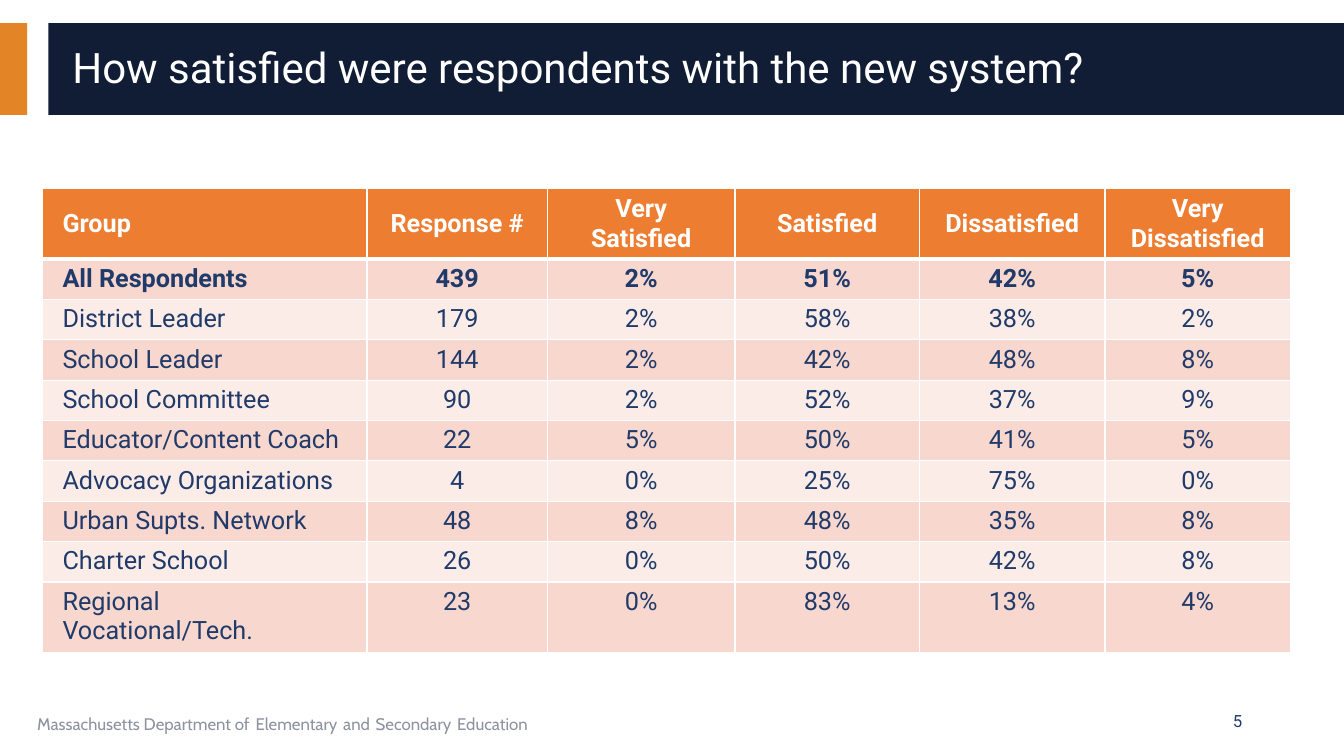
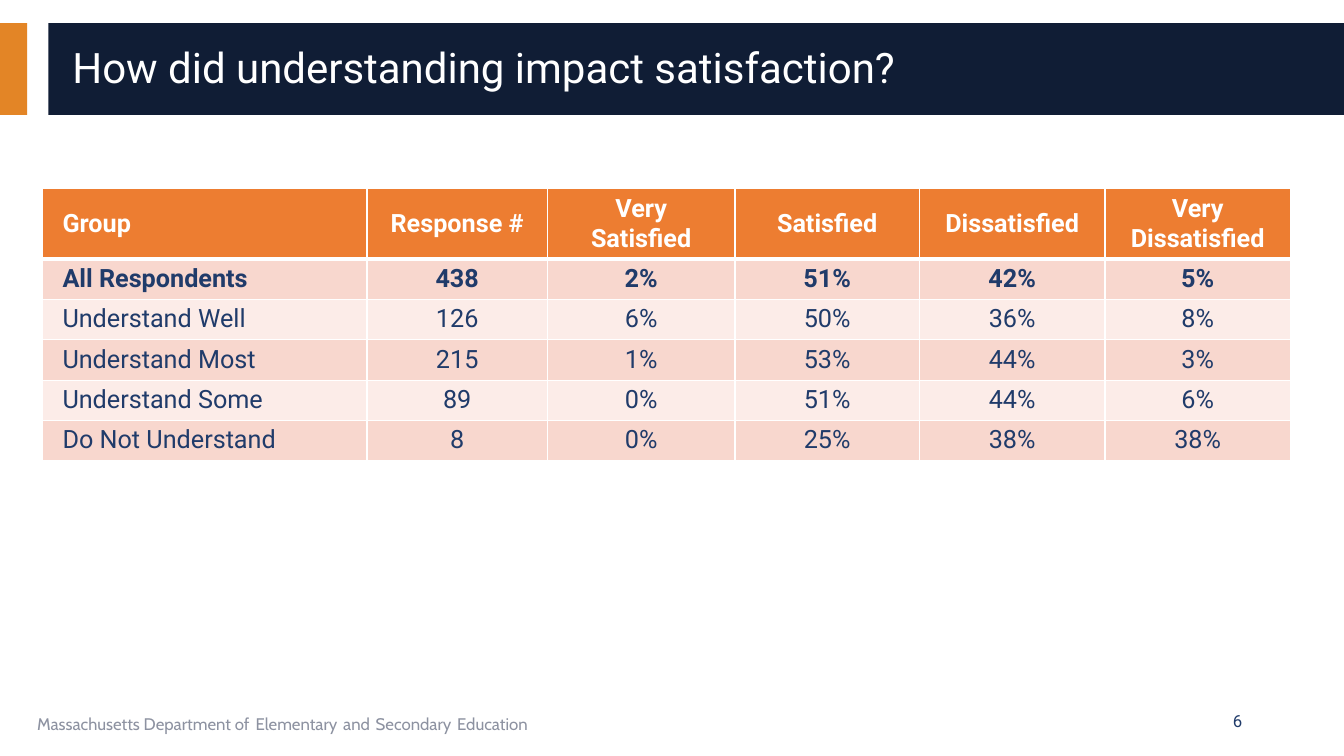
from lxml.etree import SubElement
from pptx import Presentation
from pptx.dml.color import RGBColor
from pptx.enum.shapes import MSO_SHAPE
from pptx.enum.text import MSO_ANCHOR, PP_ALIGN
from pptx.oxml.ns import qn
from pptx.util import Inches, Pt

# Content
FOOTER = ["Massachusetts Department of", "Elementary", "and", "Secondary", "Education"]
HEADERS = ["Group", "Response #", "Very Satisfied", "Satisfied", "Dissatisfied",
           "Very\nDissatisfied"]
SLIDES = [
    {"number": 5, "title": "How satisfied were respondents with the new system?", "rows": [
        ("All Respondents", "439", "2%", "51%", "42%", "5%"),
        ("District Leader", "179", "2%", "58%", "38%", "2%"),
        ("School Leader", "144", "2%", "42%", "48%", "8%"),
        ("School Committee", "90", "2%", "52%", "37%", "9%"),
        ("Educator/Content Coach", "22", "5%", "50%", "41%", "5%"),
        ("Advocacy Organizations", "4", "0%", "25%", "75%", "0%"),
        ("Urban Supts. Network", "48", "8%", "48%", "35%", "8%"),
        ("Charter School", "26", "0%", "50%", "42%", "8%"),
        ("Regional Vocational/Tech.", "23", "0%", "83%", "13%", "4%"),
    ]},
    {"number": 6, "title": "How did understanding impact satisfaction?", "rows": [
        ("All Respondents", "438", "2%", "51%", "42%", "5%"),
        ("Understand Well", "126", "6%", "50%", "36%", "8%"),
        ("Understand Most", "215", "1%", "53%", "44%", "3%"),
        ("Understand Some", "89", "0%", "51%", "44%", "6%"),
        ("Do Not Understand", "8", "0%", "25%", "38%", "38%"),
    ]},
]

# Shared style
ORANGE = RGBColor(0xE3, 0x85, 0x26)
NAVY = RGBColor(0x10, 0x1D, 0x35)
BLUE = RGBColor(0x20, 0x3B, 0x6A)
GRAY = RGBColor(0x8D, 0x92, 0xA1)
WHITE = RGBColor(0xFF, 0xFF, 0xFF)
HEADER_FILL = RGBColor(0xED, 0x7D, 0x31)
BAND_FILLS = [RGBColor(0xF8, 0xD7, 0xCE), RGBColor(0xFC, 0xEC, 0xE8)]
BODY_FONT, FOOTER_FONT = "Roboto", "Cabin"

COLUMN_WIDTHS = [3.22, 1.79, 1.86, 1.83, 1.84, 1.84]
ROW_HEIGHT, TALL_ROW_HEIGHT = 0.4, 0.68
LABEL_LIMIT = 22  # longer group names take two lines


def add_span(para, text, size, color, font=BODY_FONT, bold=False):
    span = para.add_run()
    span.text = text
    span.font.name = font
    span.font.size = Pt(size)
    span.font.bold = bold
    span.font.color.rgb = color


def add_band(page, left, width, color):
    band = page.shapes.add_shape(MSO_SHAPE.RECTANGLE, Inches(left), Inches(0.23),
                                 Inches(width), Inches(0.91))
    band.shadow.inherit = False
    band.fill.solid()
    band.fill.fore_color.rgb = color
    band.line.fill.background()


def add_box(page, left, top, width, height, anchor=MSO_ANCHOR.MIDDLE):
    box = page.shapes.add_textbox(Inches(left), Inches(top), Inches(width), Inches(height))
    box.text_frame.word_wrap = True
    box.text_frame.vertical_anchor = anchor
    return box.text_frame.paragraphs[0]


def add_frame(page, title, number):
    # Bands and title
    add_band(page, 0, 0.27, ORANGE)
    add_band(page, 0.48, 12.85, NAVY)
    para = add_box(page, 0.62, 0.32, 12.44, 0.74)
    para.line_spacing = 0.9
    add_span(para, title, 30, WHITE)

    # Footer, with wide spaces between its parts
    para = add_box(page, 0.27, 6.95, 8.44, 0.4, MSO_ANCHOR.TOP)
    for index, part in enumerate(FOOTER):
        if index:
            add_span(para, " ", 18, BLUE, FOOTER_FONT)
        add_span(para, part, 12, GRAY, FOOTER_FONT)

    # Slide number
    para = add_box(page, 9.42, 6.95, 3, 0.4)
    para.alignment = PP_ALIGN.RIGHT
    add_span(para, str(number), 12, BLUE)


def set_borders(cell, top, bottom):
    properties = cell._tc.get_or_add_tcPr()
    widths = {"a:lnL": 1, "a:lnR": 1, "a:lnT": top, "a:lnB": bottom}
    for position, (side, width) in enumerate(widths.items()):
        line = SubElement(properties, qn(side), w=str(Pt(width)))
        fill = SubElement(line, qn("a:solidFill"))
        SubElement(fill, qn("a:srgbClr"), val=str(WHITE))
        properties.insert(position, line)


def fill_cell(cell, text, row, column):
    is_header = row == 0
    cell.margin_left = cell.margin_right = Inches(0.2)
    cell.margin_top = cell.margin_bottom = Inches(0.05)
    cell.vertical_anchor = MSO_ANCHOR.MIDDLE if is_header else MSO_ANCHOR.TOP
    cell.fill.solid()
    cell.fill.fore_color.rgb = HEADER_FILL if is_header else BAND_FILLS[(row - 1) % 2]
    set_borders(cell, top=3 if row == 1 else 1, bottom=3 if is_header else 1)
    frame = cell.text_frame
    for index, line in enumerate(text.split("\n")):
        para = frame.add_paragraph() if index else frame.paragraphs[0]
        para.alignment = PP_ALIGN.CENTER if column else PP_ALIGN.LEFT
        add_span(para, line, 18, WHITE if is_header else BLUE, bold=row <= 1)


def add_results(page, rows):
    lines = [HEADERS, *rows]
    heights = [TALL_ROW_HEIGHT if line is HEADERS or len(line[0]) > LABEL_LIMIT
               else ROW_HEIGHT for line in lines]
    table = page.shapes.add_table(len(lines), len(HEADERS), Inches(0.42), Inches(1.87),
                                  Inches(sum(COLUMN_WIDTHS)), Inches(sum(heights))).table
    table.horz_banding = False
    for column, width in zip(table.columns, COLUMN_WIDTHS):
        column.width = Inches(width)
    for row, (line, height) in enumerate(zip(lines, heights)):
        table.rows[row].height = Inches(height)
        for column, text in enumerate(line):
            fill_cell(table.cell(row, column), text, row, column)


def main():
    deck = Presentation()
    deck.slide_width, deck.slide_height = Inches(13.33), Inches(7.5)
    for content in SLIDES:
        page = deck.slides.add_slide(deck.slide_layouts[6])
        add_frame(page, content["title"], content["number"])
        add_results(page, content["rows"])
    deck.save("out.pptx")


if __name__ == "__main__":
    main()
